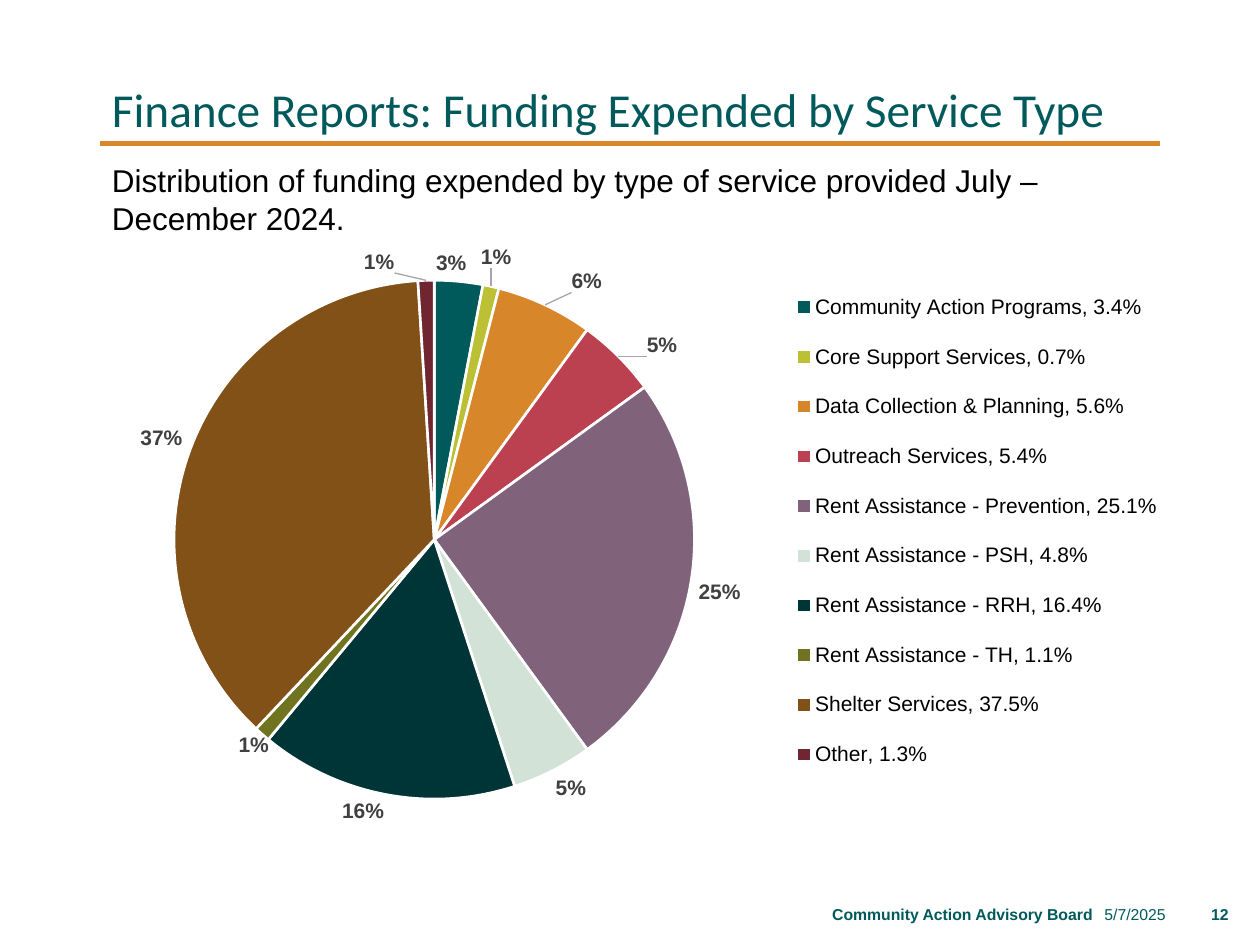
from copy import deepcopy
from lxml import etree
from pptx import Presentation
from pptx.chart.data import CategoryChartData
from pptx.dml.color import RGBColor
from pptx.enum.chart import XL_CHART_TYPE, XL_LABEL_POSITION, XL_LEGEND_POSITION
from pptx.enum.text import MSO_ANCHOR, PP_ALIGN
from pptx.oxml import parse_xml
from pptx.oxml.ns import nsdecls, qn
from pptx.util import Inches, Pt

PIE = XL_CHART_TYPE.PIE
OUTSIDE = XL_LABEL_POSITION.OUTSIDE_END
LEGEND_RIGHT = XL_LEGEND_POSITION.RIGHT
LEFT, RIGHT = PP_ALIGN.LEFT, PP_ALIGN.RIGHT
TOP, MIDDLE, BOTTOM = MSO_ANCHOR.TOP, MSO_ANCHOR.MIDDLE, MSO_ANCHOR.BOTTOM

COLORS = {"title": "00595B", "footer": "005A5B", "rule": "D8872A", "text": "000000",
          "label": "404040", "leader": "A6A6A6", "white": "FFFFFF"}

SERVICES = [
    ("Community Action Programs, 3.4%", 3, "00595B"),
    ("Core Support Services, 0.7%", 1, "BBC035"),
    ("Data Collection & Planning, 5.6%", 6, "D7872A"),
    ("Outreach Services, 5.4%", 5, "BB4050"),
    ("Rent Assistance - Prevention, 25.1%", 25, "81627B"),
    ("Rent Assistance - PSH, 4.8%", 5, "D3E2D6"),
    ("Rent Assistance - RRH, 16.4%", 16, "003537"),
    ("Rent Assistance - TH, 1.1%", 1, "707320"),
    ("Shelter Services, 37.5%", 37, "825118"),
    ("Other, 1.3%", 1, "702630"),
]
LABEL_SHIFTS = {0: (-0.02, 0), 1: (-0.01, -0.02), 2: (0.02, -0.01),
                3: (0.02, 0.01), 7: (0.01, -0.01), 9: (-0.04, 0)}

prs = Presentation()
prs.slide_width, prs.slide_height = Inches(10), Inches(7.5)
s = prs.slides.add_slide(prs.slide_layouts[6])


def add_text(text, x, y, w, h, size, color, font="Arial", bold=False,
             align=LEFT, anchor=TOP, spacing=1.0):
    tf = s.shapes.add_textbox(Inches(x), Inches(y), Inches(w), Inches(h)).text_frame
    tf.word_wrap = True
    tf.vertical_anchor = anchor
    p = tf.paragraphs[0]
    p.alignment = align
    p.line_spacing = spacing
    r = p.add_run()
    r.text = text
    r.font.name, r.font.size, r.font.bold = font, Pt(size), bold
    r.font.color.rgb = RGBColor.from_string(COLORS[color])


def manual_layout(x, y, w=None, h=None, inner=False):
    target = '<c:layoutTarget val="inner"/>' if inner else ""
    modes, size = "", ""
    if w is not None:
        modes = '<c:xMode val="edge"/><c:yMode val="edge"/>'
        size = f'<c:w val="{w}"/><c:h val="{h}"/>'
    return parse_xml(f'<c:layout {nsdecls("c")}><c:manualLayout>{target}{modes}'
                     f'<c:x val="{x}"/><c:y val="{y}"/>{size}</c:manualLayout></c:layout>')


rule = s.shapes.add_connector(1, Inches(0.79), Inches(1.14), Inches(9.21), Inches(1.14))
rule.line.color.rgb = RGBColor.from_string(COLORS["rule"])
rule.line.width = Pt(3)
etree.SubElement(rule._element.spPr, qn("a:effectLst"))

add_text("Finance Reports: Funding Expended by Service Type", 0.79, 0.4, 8.42, 0.74,
         27, "title", font="Calibri", anchor=BOTTOM, spacing=0.9)
add_text("Distribution of funding expended by type of service provided July – December 2024.",
         0.79, 1.23, 8.42, 0.91, 18, "text")
for text, x, w, bold in [("5/7/2025", 8.56, 0.79, False),
                         ("Community Action Advisory Board", 2.5, 6.27, True),
                         ("12", 9.38, 0.47, True)]:
    add_text(text, x, 7.06, w, 0.4, 9, "footer", bold=bold, align=RIGHT, anchor=MIDDLE)

data = CategoryChartData()
data.categories = [name for name, _, _ in SERVICES]
data.add_series("Series 1", [value for _, value, _ in SERVICES])
chart = s.shapes.add_chart(PIE, Inches(0.11), Inches(1.95), Inches(9.27), Inches(4.59),
                           data).chart
chart.has_title = False
chart.font.name, chart.font.size = "Arial", Pt(10)
chart.font.color.rgb = RGBColor.from_string(COLORS["text"])

chart.has_legend = True
legend = chart.legend
legend.position = LEGEND_RIGHT
legend.include_in_layout = False
legend.font.name, legend.font.size = "Arial", Pt(12)
legend.font.color.rgb = RGBColor.from_string(COLORS["text"])
for old in legend._element.findall(qn("c:layout")):
    legend._element.remove(old)
legend._element.find(qn("c:legendPos")).addnext(manual_layout(0.66, 0.04, 0.33, 0.91))

plot_area = chart._chartSpace.chart.plotArea
for old in plot_area.findall(qn("c:layout")):
    plot_area.remove(old)
plot_area.insert(0, manual_layout(0.07, 0.06, 0.58, 0.9, inner=True))

plot = chart.plots[0]
plot.vary_by_categories = True
series = plot.series[0]
for i, (_, _, color) in enumerate(SERVICES):
    fmt = series.points[i].format
    fmt.fill.solid()
    fmt.fill.fore_color.rgb = RGBColor.from_string(color)
    fmt.line.color.rgb = RGBColor.from_string(COLORS["white"])
    fmt.line.width = Pt(1.5)

labels = series.data_labels
labels.show_value = False
labels.show_percentage = True
labels.number_format = "0%"
labels.number_format_is_linked = False
labels.position = OUTSIDE
labels.font.name, labels.font.size, labels.font.bold = "Arial", Pt(12), True
labels.font.color.rgb = RGBColor.from_string(COLORS["label"])

d_lbls = labels._element
show_leaders = d_lbls.find(qn("c:showLeaderLines"))
show_leaders.set("val", "1")
shared = [e for e in d_lbls if e is not show_leaders]
show_leaders.addnext(parse_xml(
    f'<c:leaderLines {nsdecls("c", "a")}><c:spPr><a:ln w="9525"><a:solidFill>'
    f'<a:srgbClr val="{COLORS["leader"]}"/></a:solidFill></a:ln></c:spPr></c:leaderLines>'))
for pos, (i, shift) in enumerate(LABEL_SHIFTS.items()):
    d_lbl = parse_xml(f'<c:dLbl {nsdecls("c")}><c:idx val="{i}"/></c:dLbl>')
    d_lbl.append(manual_layout(*shift))
    d_lbl.extend(deepcopy(e) for e in shared)
    d_lbls.insert(pos, d_lbl)

prs.save("out.pptx")
